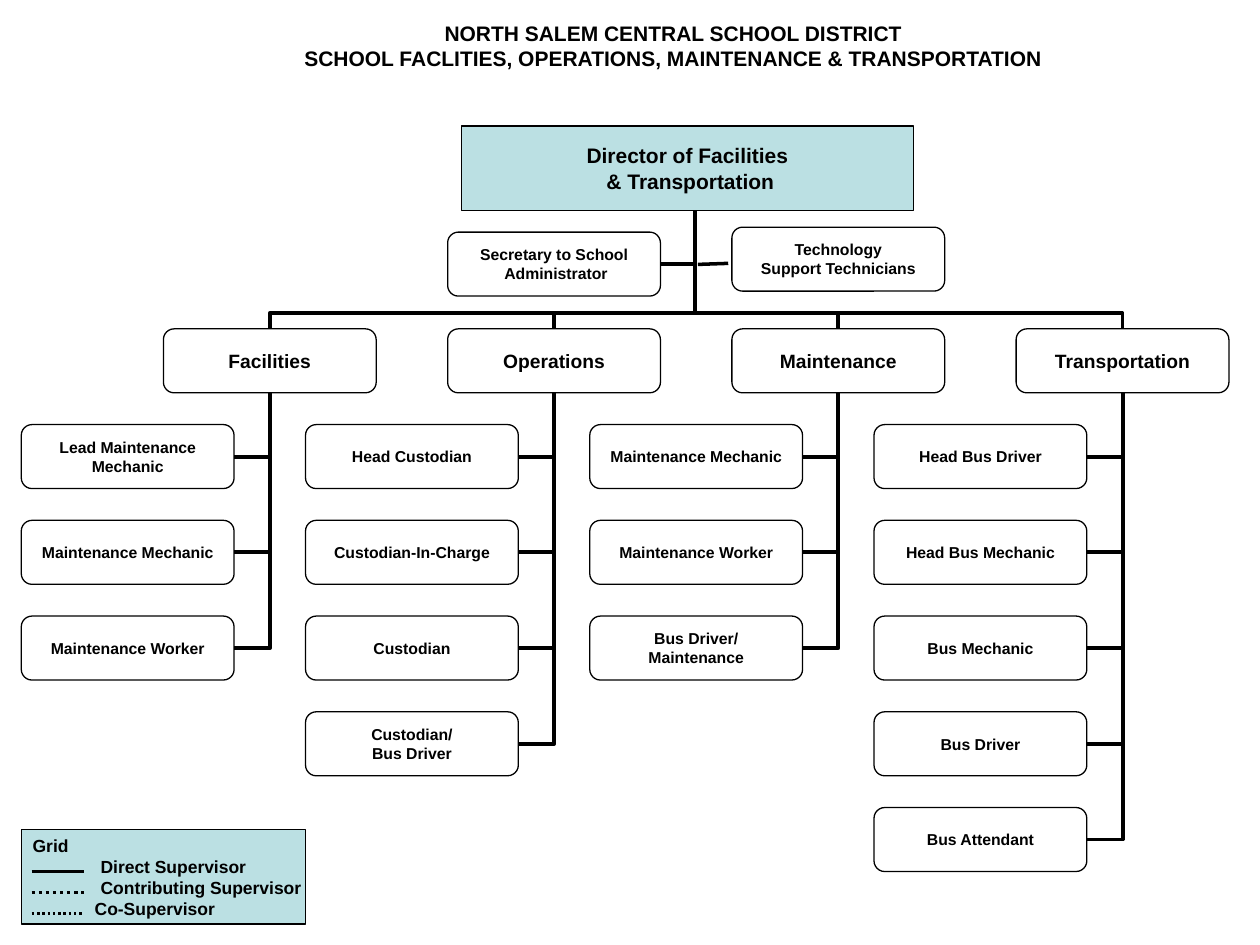
from dataclasses import dataclass

from lxml import etree
from pptx import Presentation
from pptx.dml.color import RGBColor
from pptx.enum.dml import MSO_LINE
from pptx.enum.shapes import MSO_CONNECTOR, MSO_SHAPE
from pptx.enum.text import MSO_ANCHOR, PP_ALIGN
from pptx.oxml.ns import qn
from pptx.util import Cm, Pt

RECT, ROUNDED = MSO_SHAPE.RECTANGLE, MSO_SHAPE.ROUNDED_RECTANGLE
STRAIGHT, ELBOW = MSO_CONNECTOR.STRAIGHT, MSO_CONNECTOR.ELBOW
LEFT, CENTER = PP_ALIGN.LEFT, PP_ALIGN.CENTER
TOP, MIDDLE = MSO_ANCHOR.TOP, MSO_ANCHOR.MIDDLE
DOTTED = MSO_LINE.ROUND_DOT


@dataclass(frozen=True)
class Theme:
    font: str = "Arial"
    ink: RGBColor = RGBColor(0, 0, 0)
    panel: RGBColor = RGBColor(0xBB, 0xE0, 0xE3)
    title: int = 12
    head: int = 11
    legend: int = 10
    staff: int = 9
    outline: float = 0.75
    branch: float = 2.25
    rule: float = 2


THEME = Theme()
BOX_W, BOX_H = 4.29, 1.29
COL_X, COL_STEP = 0.43, 5.73
ROW_Y, ROW_STEP = 8.56, 1.93
HEAD_X, HEAD_Y = COL_X + COL_STEP / 2, ROW_Y - ROW_STEP
TRUNK_X, TRUNK_Y = 14.02, 4.04

TITLE = ("NORTH SALEM CENTRAL SCHOOL DISTRICT\v"
         "SCHOOL FACLITIES, OPERATIONS, MAINTENANCE & TRANSPORTATION")
DEPARTMENTS = {
    "Facilities": ["Lead Maintenance\nMechanic", "Maintenance Mechanic",
                   "Maintenance Worker"],
    "Operations": ["Head Custodian", "Custodian-In-Charge", "Custodian",
                   "Custodian/\nBus Driver"],
    "Maintenance": ["Maintenance Mechanic", "Maintenance Worker",
                    "Bus Driver/\nMaintenance"],
    "Transportation": ["Head Bus Driver", "Head Bus Mechanic", "Bus Mechanic",
                       "Bus Driver", "Bus Attendant"],
}
LEGEND = "Grid\nDirect Supervisor\nContributing Supervisor\nCo-Supervisor"
LEGEND_INDENTS = [0, 1.37, 1.37, 1.25]
LEGEND_LINES = [(17.57, THEME.rule, None), (17.99, THEME.rule, DOTTED),
                (18.41, 1.5, DOTTED)]


def write(tf, text, size, align=CENTER, anchor=MIDDLE):
    tf.text = text
    tf.word_wrap = True
    tf.vertical_anchor = anchor
    for p in tf.paragraphs:
        p.alignment = align
        for r in p.runs:
            r.font.name, r.font.size, r.font.bold = THEME.font, Pt(size), True
            r.font.color.rgb = THEME.ink


def add_box(s, text, x, y, w=BOX_W, h=BOX_H, size=THEME.staff, shape=ROUNDED,
            fill=None, align=CENTER, inset=0):
    sp = s.shapes.add_shape(shape, Cm(x), Cm(y), Cm(w), Cm(h))
    sp.shadow.inherit = False
    if fill is None:
        sp.fill.background()
    else:
        sp.fill.solid()
        sp.fill.fore_color.rgb = fill
    sp.line.color.rgb = THEME.ink
    sp.line.width = Pt(THEME.outline)
    tf = sp.text_frame
    tf.margin_left = Cm(inset)
    tf.margin_right = tf.margin_top = tf.margin_bottom = 0
    write(tf, text, size, align)
    return sp


def add_line(s, x1, y1, x2, y2, width=THEME.branch, kind=STRAIGHT, dash=None):
    line = s.shapes.add_connector(kind, Cm(x1), Cm(y1), Cm(x2), Cm(y2))
    line.line.color.rgb = THEME.ink
    line.line.width = Pt(width)
    if dash is not None:
        line.line.dash_style = dash
    etree.SubElement(line._element.spPr, qn("a:effectLst"))
    return line


def add_corner(s, x1, y1, x2, y2):
    line = add_line(s, x1, y1, x2, y2, kind=ELBOW)
    line._element.spPr.find(qn("a:prstGeom")).set("prst", "bentConnector2")


def add_drop(s, x1, y1, x2, y2):
    cx, cy = (x1 + x2) / 2, (y1 + y2) / 2
    half_w, half_h = abs(y2 - y1) / 2, abs(x2 - x1) / 2
    side = 1 if x1 > x2 else -1
    line = add_line(s, cx + side * half_w, cy - half_h,
                    cx - side * half_w, cy + half_h, kind=ELBOW)
    spPr = line._element.spPr
    turn = 90 if side > 0 else 270
    spPr.find(qn("a:xfrm")).set("rot", str(turn * 60000))
    geom = spPr.find(qn("a:prstGeom"))
    av = geom.find(qn("a:avLst"))
    if av is None:
        av = etree.SubElement(geom, qn("a:avLst"))
    etree.SubElement(av, qn("a:gd"), name="adj1", fmla="val 12300")


def add_title(s):
    sp = s.shapes.title
    sp.left, sp.top, sp.width, sp.height = Cm(1.09), Cm(0.28), Cm(24.97), Cm(1.47)
    write(sp.text_frame, TITLE, THEME.title, anchor=TOP)
    sp.text_frame.paragraphs[0].line_spacing = 1.0


def add_branches(s):
    for col, staff in enumerate(DEPARTMENTS.values()):
        stem_x = HEAD_X + col * COL_STEP + BOX_W / 2
        add_drop(s, stem_x, HEAD_Y, TRUNK_X, TRUNK_Y)
        for row in range(len(staff)):
            add_corner(s, COL_X + col * COL_STEP + BOX_W,
                       ROW_Y + row * ROW_STEP + BOX_H / 2,
                       stem_x, HEAD_Y + BOX_H)


def add_departments(s):
    for col, (head, staff) in enumerate(DEPARTMENTS.items()):
        add_box(s, head, HEAD_X + col * COL_STEP, HEAD_Y, size=THEME.head)
        for row, job in enumerate(staff):
            add_box(s, job, COL_X + col * COL_STEP, ROW_Y + row * ROW_STEP)


def add_direction(s):
    secretary_x = HEAD_X + COL_STEP
    add_corner(s, secretary_x + BOX_W, 5.33, TRUNK_X, TRUNK_Y)
    add_line(s, 14.07, 5.33, 14.68, 5.31, width=THEME.rule)
    add_box(s, "Secretary to School\n Administrator", secretary_x, 4.68)
    add_box(s, "Technology\nSupport Technicians", HEAD_X + 2 * COL_STEP, 4.58)
    add_box(s, "Director of Facilities\n & Transportation", 9.31, 2.54, 9.1, 1.7,
            size=THEME.title, shape=RECT, fill=THEME.panel)


def add_legend(s):
    sp = add_box(s, LEGEND, COL_X, 16.72, COL_STEP, 1.91, size=THEME.legend,
                 shape=RECT, fill=THEME.panel, align=LEFT, inset=0.23)
    for p, indent in zip(sp.text_frame.paragraphs, LEGEND_INDENTS):
        p._p.get_or_add_pPr().set("marL", str(Cm(indent)))
    for y, width, dash in LEGEND_LINES:
        add_line(s, 0.64, y, 1.69, y, width=width, dash=dash)


def main():
    prs = Presentation()
    prs.slide_width, prs.slide_height = Cm(25.4), Cm(19.05)
    s = prs.slides.add_slide(prs.slide_layouts[5])
    add_title(s)
    add_branches(s)
    add_direction(s)
    add_departments(s)
    add_legend(s)
    prs.save("out.pptx")


if __name__ == "__main__":
    main()
